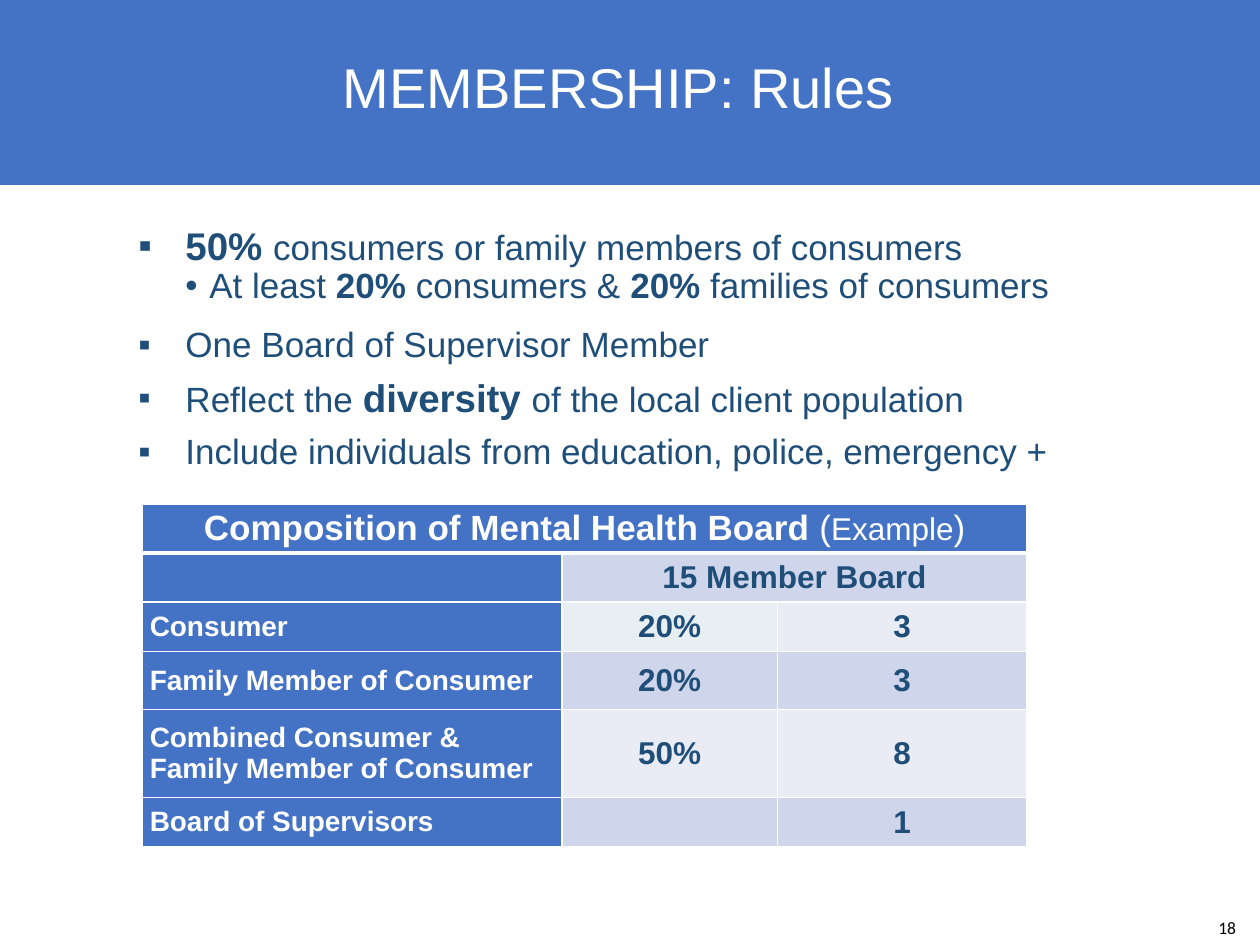
from lxml import etree
from pptx import Presentation
from pptx.dml.color import RGBColor
from pptx.enum.shapes import MSO_SHAPE
from pptx.enum.text import MSO_ANCHOR, PP_ALIGN
from pptx.oxml.ns import qn
from pptx.util import Cm, Pt

BLUE = RGBColor(0x44, 0x72, 0xC4)
NAVY = RGBColor(0x1F, 0x4E, 0x79)
WHITE = RGBColor(0xFF, 0xFF, 0xFF)
BLACK = RGBColor(0x00, 0x00, 0x00)
BAND_DARK = RGBColor(0xCF, 0xD5, 0xEA)
BAND_LIGHT = RGBColor(0xE9, 0xEB, 0xF5)
PALE_GREEN = RGBColor(0xE8, 0xEF, 0xF3)

# Each rule: level, space before, space after, runs of (text, size, bold)
RULES = [
    (0, 6, 0, [("50% ", 22, True),
               ("consumers or family members of consumers", 20, False)]),
    (1, 0, 6, [("At least ", 20, False), ("20%", 20, True),
               (" consumers & ", 20, False), ("20%", 20, True),
               (" families of consumers", 20, False)]),
    (0, 6, 0, [("One Board of Supervisor Member", 20, False)]),
    (0, 8, 0, [("Reflect the ", 20, False), ("diversity ", 22, True),
               ("of the local client population", 20, False)]),
    (0, 8, 0, [("Include individuals from education, police, emergency +",
                20, False)]),
]
# Bullet, left margin and hanging indent by level
BULLETS = [("▪", Cm(0.95), Cm(-0.95)), ("•", Cm(1.43), Cm(-0.48))]

MEMBERS = [
    ("Consumer", "20%", "3"),
    ("Family Member of Consumer", "20%", "3"),
    ("Combined Consumer & Family Member of Consumer", "50%", "8"),
    ("Board of Supervisors", "", "1"),
]
COL_WIDTHS = [8.46, 4.34, 5.03]
ROW_HEIGHTS = [0.99, 0.99, 0.99, 1.17, 1.78, 0.99]


def add_run(p, text, size, color, bold=False, font="Arial"):
    r = p.add_run()
    r.text = text
    r.font.name = font
    r.font.size = Pt(size)
    r.font.bold = bold
    r.font.color.rgb = color


def add_text_box(s, left, top, width, height):
    tf = s.shapes.add_textbox(Cm(left), Cm(top), Cm(width), Cm(height)).text_frame
    tf.word_wrap = True
    return tf


def add_banner(s, width):
    sp = s.shapes.add_shape(MSO_SHAPE.RECTANGLE, 0, 0, width, Cm(3.73))
    sp.shadow.inherit = False
    sp.fill.solid()
    sp.fill.fore_color.rgb = BLUE
    sp.line.fill.background()


def add_title(s, text):
    tf = add_text_box(s, 0.91, 0.43, 23.37, 2.77)
    tf.margin_left = 0
    tf.vertical_anchor = MSO_ANCHOR.MIDDLE
    p = tf.paragraphs[0]
    p.alignment = PP_ALIGN.CENTER
    p.line_spacing = 0.9
    p.space_before = Pt(7.5)
    add_run(p, text, 32, WHITE)


def set_bullet(p, level):
    char, margin, indent = BULLETS[level]
    pPr = p._p.get_or_add_pPr()
    pPr.set("marL", str(margin))
    pPr.set("indent", str(indent))
    etree.SubElement(pPr, qn("a:buFont"), typeface="Arial")
    etree.SubElement(pPr, qn("a:buChar"), char=char)


def add_rules(s):
    tf = add_text_box(s, 2.54, 4.45, 21.34, 13.13)
    for i, (level, before, after, runs) in enumerate(RULES):
        p = tf.add_paragraph() if i else tf.paragraphs[0]
        p.level = level
        p.line_spacing = 0.9
        p.space_before = Pt(before)
        p.space_after = Pt(after)
        set_bullet(p, level)
        for text, size, bold in runs:
            add_run(p, text, size, NAVY, bold)


def set_borders(cell, bottom=1, top=1):
    tcPr = cell._tc.get_or_add_tcPr()
    widths = {"a:lnL": 1, "a:lnR": 1, "a:lnT": top, "a:lnB": bottom}
    for i, (tag, width) in enumerate(widths.items()):
        ln = etree.Element(qn(tag), w=str(Pt(width)))
        fill = etree.SubElement(ln, qn("a:solidFill"))
        etree.SubElement(fill, qn("a:srgbClr"), val=str(WHITE))
        tcPr.insert(i, ln)


def fill_cell(cell, fill, runs=(), color=NAVY, align=PP_ALIGN.CENTER):
    cell.fill.solid()
    cell.fill.fore_color.rgb = fill
    cell.vertical_anchor = MSO_ANCHOR.MIDDLE
    cell.margin_left = cell.margin_right = Cm(0.15)
    cell.margin_top = cell.margin_bottom = 0
    p = cell.text_frame.paragraphs[0]
    p.alignment = align
    for text, size, bold in runs:
        add_run(p, text, size, color, bold)


def add_board_table(s):
    frame = s.shapes.add_table(len(ROW_HEIGHTS), len(COL_WIDTHS), Cm(2.87), Cm(10.16),
                               Cm(sum(COL_WIDTHS)), Cm(sum(ROW_HEIGHTS)))
    table = frame.table
    for col, width in zip(table.columns, COL_WIDTHS):
        col.width = Cm(width)
    for row, height in zip(table.rows, ROW_HEIGHTS):
        row.height = Cm(height)

    # Heading rows
    table.cell(0, 0).merge(table.cell(0, 2))
    table.cell(1, 1).merge(table.cell(1, 2))
    heading = [("Composition of Mental Health Board ", 20, True), ("(", 20, False),
               ("Example", 18, False), (")", 20, False)]
    fill_cell(table.cell(0, 0), BLUE, heading, WHITE)
    fill_cell(table.cell(1, 0), BLUE)
    fill_cell(table.cell(1, 1), BAND_DARK, [("15 Member Board", 18, True)])

    # Member rows with alternating bands
    for i, (label, *values) in enumerate(MEMBERS):
        row = i + 2
        fill_cell(table.cell(row, 0), BLUE, [(label, 16, True)], WHITE, PP_ALIGN.LEFT)
        band = BAND_DARK if i % 2 else BAND_LIGHT
        for col, value in enumerate(values, start=1):
            fill = PALE_GREEN if (i, col) == (0, 1) else band
            fill_cell(table.cell(row, col), fill, [(value, 18, True)] if value else ())

    # White grid, thicker under the heading
    for row in range(len(ROW_HEIGHTS)):
        for col in range(len(COL_WIDTHS)):
            set_borders(table.cell(row, col), bottom=3 if row == 0 else 1,
                        top=3 if row == 1 else 1)


def add_slide_number(s, number):
    tf = add_text_box(s, 24.31, 18.36, 1.09, 0.69)
    tf.word_wrap = False
    add_run(tf.paragraphs[0], number, 10, BLACK, font="Calibri")


def main():
    prs = Presentation()
    prs.slide_width, prs.slide_height = Cm(25.4), Cm(19.05)
    s = prs.slides.add_slide(prs.slide_layouts[6])
    add_banner(s, prs.slide_width)
    add_slide_number(s, "18")
    add_title(s, "MEMBERSHIP: Rules")
    add_rules(s)
    add_board_table(s)
    prs.save("out.pptx")


if __name__ == "__main__":
    main()
